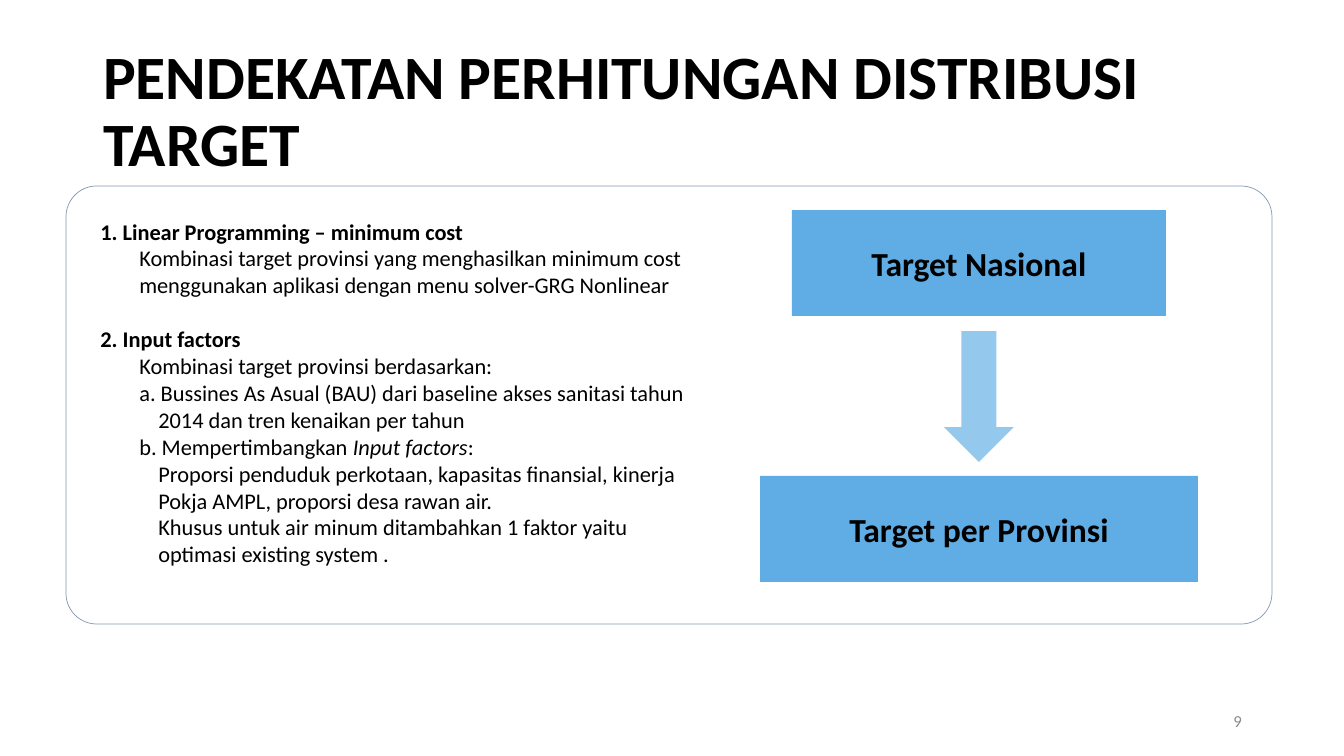
from pptx import Presentation
from pptx import util as u
from pptx.dml.color import RGBColor
from pptx.enum import shapes, text

PX = 914400 / 100.8
FONT = "Calibri"
BLACK, BLUE, PALE, EDGE, GRAY = "000000", "5FADE4", "94C8ED", "8497B0", "8C8C8C"
KIND = shapes.MSO_SHAPE
ALIGN = text.PP_ALIGN

TITLE = "PENDEKATAN PERHITUNGAN DISTRIBUSI TARGET"
PAGE = "9"
# Level, then runs; every second run is italic
NOTES = [
    ("head", ["1. Linear Programming – minimum cost"]),
    ("body", ["Kombinasi target provinsi yang menghasilkan minimum cost "
              "menggunakan aplikasi dengan menu solver-GRG Nonlinear"]),
    ("head", ["2. Input factors"]),
    ("body", ["Kombinasi target provinsi berdasarkan:"]),
    ("item", ["a. Bussines As Asual (BAU) dari baseline akses sanitasi tahun "
              "2014 dan tren kenaikan per tahun"]),
    ("item", ["b. Mempertimbangkan ", "Input factors", ":"]),
    ("sub", ["Proporsi penduduk perkotaan, kapasitas finansial, kinerja "
             "Pokja AMPL, proporsi desa rawan air."]),
    ("sub", ["Khusus untuk air minum ditambahkan 1 faktor yaitu "
             "optimasi existing system ."]),
]
INDENT = {"head": (0, 0), "body": (39, 0), "item": (58, -19), "sub": (58, 0)}

AXIS = 979
# Kind, top, width, height, fill, label
FLOW = [
    (KIND.RECTANGLE, 210, 374, 106, BLUE, "Target Nasional"),
    (KIND.DOWN_ARROW, 331, 70, 131, PALE, ""),
    (KIND.RECTANGLE, 476, 438, 106, BLUE, "Target per Provinsi"),
]


def px(n):
    return u.Emu(round(n * PX))


def color(code):
    return RGBColor.from_string(code)


def style(par, size, code=BLACK, bold=False, align=ALIGN.LEFT):
    par.alignment = align
    font = par.font
    font.name, font.size, font.bold = FONT, u.Pt(size), bold
    font.color.rgb = color(code)


def center(frame):
    """Wrap text and anchor it in the middle of its frame."""
    frame.word_wrap = True
    frame.auto_size = text.MSO_AUTO_SIZE.NONE
    frame.vertical_anchor = text.MSO_ANCHOR.MIDDLE


def add(kind, box, fill=None, line=None):
    shape = slide.shapes.add_shape(kind, *map(px, box))
    shape.shadow.inherit = False
    if fill:
        shape.fill.solid()
        shape.fill.fore_color.rgb = color(fill)
    else:
        shape.fill.background()
    if line:
        shape.line.color.rgb = color(line)
        shape.line.width = u.Pt(0.5)
    else:
        shape.line.fill.background()
    if kind == KIND.ROUNDED_RECTANGLE:
        shape.adjustments[0] = 0.07
    center(shape.text_frame)
    return shape


deck = Presentation()
deck.slide_width, deck.slide_height = px(1344), px(756)
slide = deck.slides.add_slide(deck.slide_layouts[5])

title = slide.shapes.title
title.left, title.top, title.width, title.height = map(px, (93, 40, 1159, 146))
title.text_frame.text = TITLE
center(title.text_frame)
head = title.text_frame.paragraphs[0]
style(head, 44, bold=True)
head.line_spacing = 0.9

panel = add(KIND.ROUNDED_RECTANGLE, (82, 186, 639, 413)).text_frame
for i, (level, runs) in enumerate(NOTES):
    par = panel.add_paragraph() if i else panel.paragraphs[0]
    style(par, 16, bold=level == "head")
    if i and level == "head":
        par.space_before = u.Pt(19.5)
    left, first = INDENT[level]
    props = par._p.get_or_add_pPr()
    props.set("marL", str(px(left)))
    props.set("indent", str(px(first)))
    for j, words in enumerate(runs):
        run = par.add_run()
        run.text = words
        if j % 2:
            run.font.italic = True

for kind, top, width, height, fill, label in FLOW:
    shape = add(kind, (AXIS - width / 2, top, width, height), fill)
    if label:
        shape.text_frame.text = label
        style(shape.text_frame.paragraphs[0], 24, bold=True, align=ALIGN.CENTER)

add(KIND.ROUNDED_RECTANGLE, (66, 186, 1206, 438), line=EDGE)

number = slide.shapes.add_textbox(*map(px, (950, 701, 302, 40))).text_frame
number.text = PAGE
center(number)
style(number.paragraphs[0], 12, GRAY, align=ALIGN.RIGHT)

deck.save("out.pptx")
